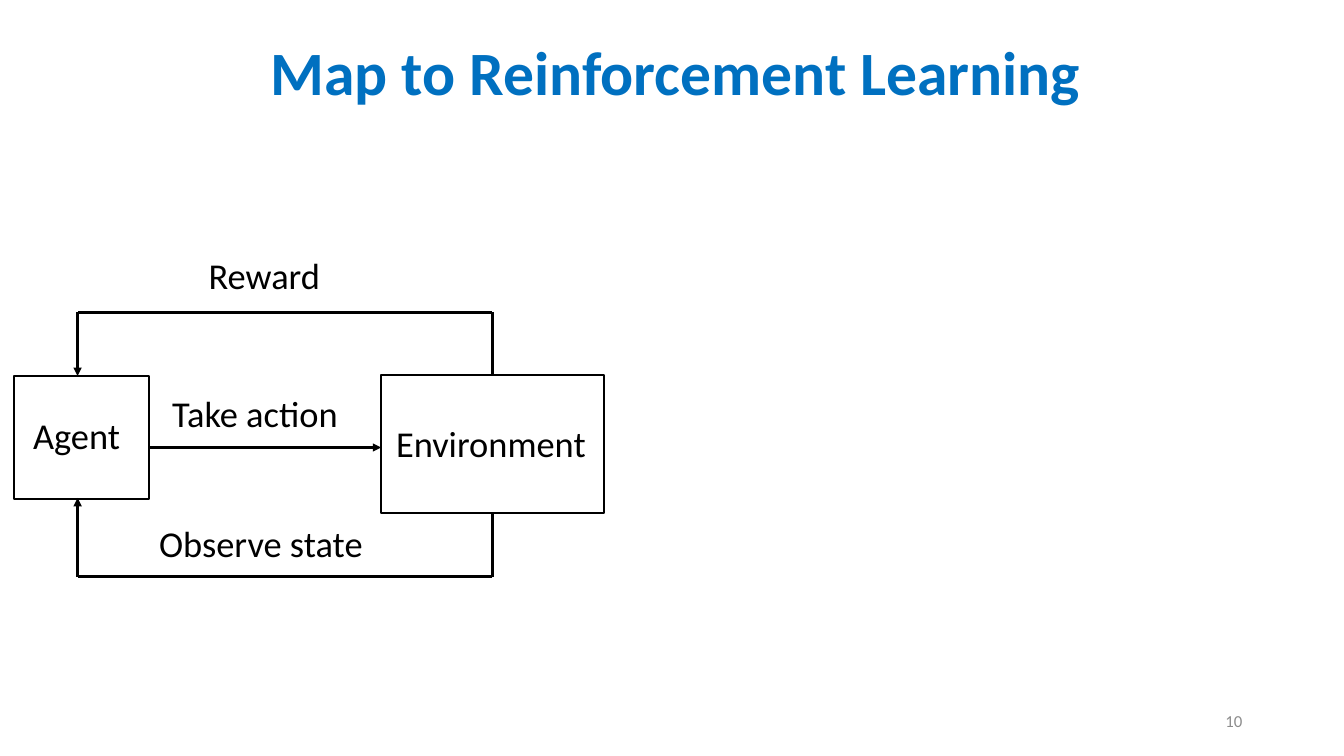
from dataclasses import dataclass

from lxml import etree
from pptx import Presentation
from pptx import util as u
from pptx.dml.color import RGBColor
from pptx.enum import shapes, text
from pptx.oxml import ns


@dataclass(frozen=True)
class Theme:
    font: str = "Calibri"
    ink: str = "000000"
    heading: str = "0070C0"
    muted: str = "8C8C8C"
    title_size: float = 44
    label_size: float = 26
    number_size: float = 12
    line_width: float = 1.8


THEME = Theme()


def add_run(paragraph, words, size, color, bold=False):
    run = paragraph.add_run()
    run.text = words
    run.font.name = THEME.font
    run.font.size = u.Pt(size)
    run.font.bold = bold
    run.font.color.rgb = RGBColor.from_string(color)


def style_line(line):
    line.color.rgb = RGBColor.from_string(THEME.ink)
    line.width = u.Pt(THEME.line_width)


def add_label(slide, words, left, top, width, wrap=False):
    label = slide.shapes.add_textbox(
        u.Inches(left), u.Inches(top), u.Inches(width), u.Inches(0.54))
    label.text_frame.word_wrap = wrap
    label.text_frame.auto_size = text.MSO_AUTO_SIZE.SHAPE_TO_FIT_TEXT
    add_run(label.text_frame.paragraphs[0], words, THEME.label_size, THEME.ink)


def add_node(slide, left, top, width, height):
    node = slide.shapes.add_shape(
        shapes.MSO_SHAPE.RECTANGLE,
        u.Inches(left), u.Inches(top), u.Inches(width), u.Inches(height))
    node.shadow.inherit = False
    node.fill.background()
    style_line(node.line)


def add_path(slide, *points):
    """Join the points with straight lines; the last one ends in an arrowhead."""
    for start, end in zip(points, points[1:]):
        segment = slide.shapes.add_connector(
            shapes.MSO_CONNECTOR.STRAIGHT, *map(u.Inches, start + end))
        style_line(segment.line)
        properties = segment.line._get_or_add_ln()
        if end == points[-1]:
            etree.SubElement(properties, ns.qn("a:tailEnd"), type="triangle")
        etree.SubElement(segment._element.spPr, ns.qn("a:effectLst"))


def add_title(slide, left, top, width, height):
    title = slide.shapes.title
    title.left, title.top = u.Inches(left), u.Inches(top)
    title.width, title.height = u.Inches(width), u.Inches(height)
    frame = title.text_frame
    frame.word_wrap = True
    frame.vertical_anchor = text.MSO_ANCHOR.MIDDLE
    heading = frame.paragraphs[0]
    heading.alignment = text.PP_ALIGN.CENTER
    heading.line_spacing = 0.9
    add_run(heading, "Map to Reinforcement Learning",
            THEME.title_size, THEME.heading, bold=True)


def add_learning_loop(slide, left, top, width, height):
    # Agent and environment
    agent_width, agent_height = 1.34, 1.22
    env_width, env_height = 2.21, 1.37
    node_top = top + 1.26
    env_left = left + width - env_width
    agent_right = left + agent_width
    agent_bottom, env_bottom = node_top + agent_height, node_top + env_height
    add_node(slide, left, node_top + 0.01, agent_width, agent_height)
    add_node(slide, env_left, node_top, env_width, env_height)
    add_label(slide, "Agent", left + 0.09, top + 1.59, 1.22, wrap=True)
    add_label(slide, "Environment", env_left + 0.05, top + 1.67, 2.1)

    # Reward, action and state paths
    agent_x = left + 0.63
    env_x = env_left + env_width / 2
    reward_y, action_y, state_y = top + 0.64, top + 1.98, top + height
    add_path(slide, (env_x, node_top), (env_x, reward_y),
             (agent_x, reward_y), (agent_x, node_top + 0.01))
    add_path(slide, (agent_right, action_y), (env_left, action_y))
    add_path(slide, (env_x, env_bottom), (env_x, state_y),
             (agent_x, state_y), (agent_x, agent_bottom))

    # Path labels
    add_label(slide, "Reward", left + 1.83, top, 1.32)
    add_label(slide, "Take action", left + 1.47, top + 1.37, 1.86)
    add_label(slide, "Observe state", left + 1.34, top + 2.66, 2.24)


def add_slide_number(slide, left, top, width, height):
    number = slide.shapes.add_textbox(
        u.Inches(left), u.Inches(top), u.Inches(width), u.Inches(height))
    number.text_frame.word_wrap = True
    number.text_frame.vertical_anchor = text.MSO_ANCHOR.MIDDLE
    paragraph = number.text_frame.paragraphs[0]
    paragraph.alignment = text.PP_ALIGN.RIGHT
    add_run(paragraph, "10", THEME.number_size, THEME.muted)


def main():
    deck = Presentation()
    deck.slide_width, deck.slide_height = u.Inches(13.33), u.Inches(7.5)
    slide = deck.slides.add_slide(deck.slide_layouts.get_by_name("Title Only"))
    add_title(slide, 0.65, 0.02, 12.11, 1.45)
    add_learning_loop(slide, 0.14, 2.46, 5.85, 3.26)
    add_slide_number(slide, 9.42, 6.95, 3, 0.4)
    deck.save("out.pptx")


if __name__ == "__main__":
    main()
